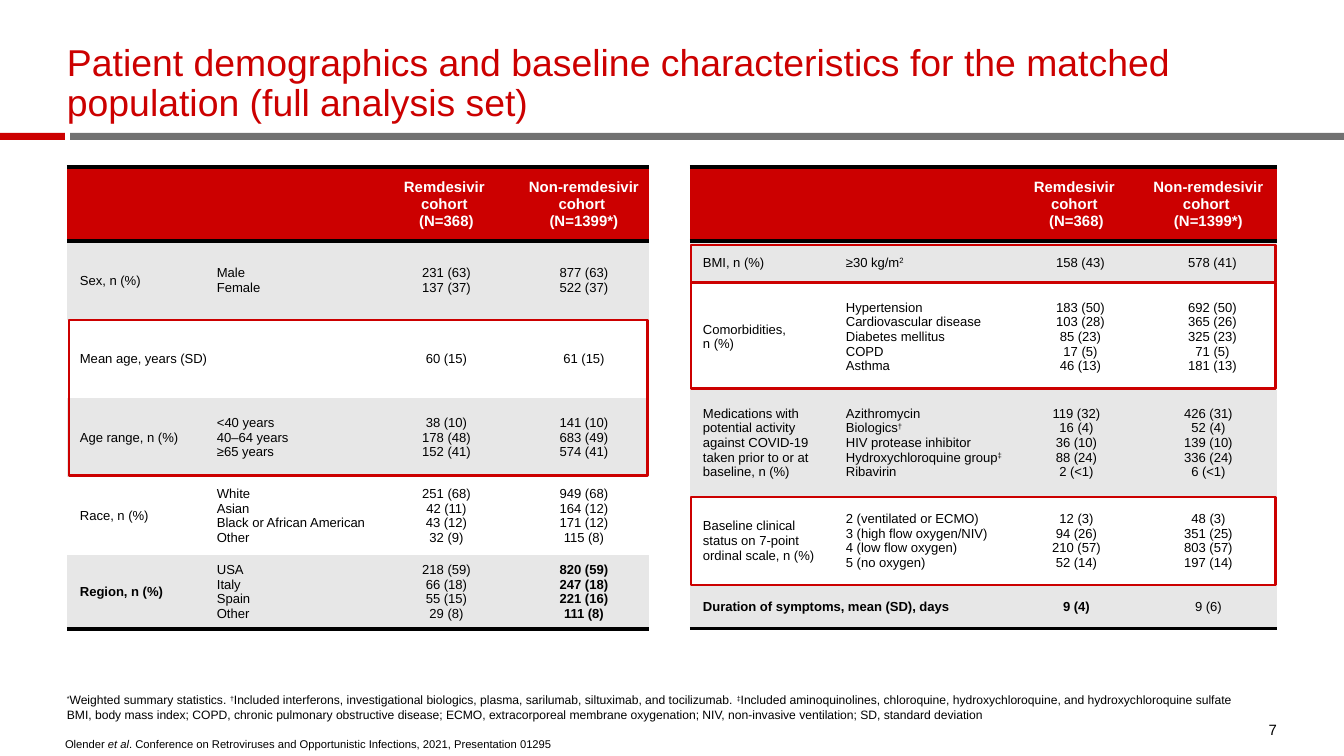
from dataclasses import dataclass

from lxml.etree import SubElement
from pptx import Presentation
from pptx.dml.color import RGBColor
from pptx.enum.shapes import MSO_SHAPE as Preset
from pptx.enum.text import MSO_ANCHOR as Anchor, PP_ALIGN as Align
from pptx.oxml.ns import qn
from pptx.util import Emu, Pt

SCALE = 914400 / 134.4
PLAIN_TABLE = "{2D5ABB26-0587-4C30-8999-92F81FD0307C}"


@dataclass(frozen=True)
class Theme:
    font: str = "Arial"
    red: str = "CC0000"
    grey: str = "717171"
    band: str = "E7E7E7"
    white: str = "FFFFFF"
    black: str = "000000"
    title: float = 20
    header: float = 8
    body: float = 7
    note: float = 6.5
    credit: float = 6
    rule: float = 2
    outline: float = 1.5


@dataclass(frozen=True)
class Row:
    height: int
    cells: tuple
    bold: tuple = ()
    roomy: bool = False


def px(length):
    return Emu(round(length * SCALE))


class Sheet:
    def __init__(self, page, theme):
        self.page = page
        self.theme = theme

    def span(self, para, text, size, color, bold, italic, raised):
        span = para.add_run()
        span.text = text
        font = span.font
        font.name, font.size = self.theme.font, Pt(size)
        font.bold, font.italic = bold, italic
        font.color.rgb = RGBColor.from_string(color)
        if raised:
            span._r.get_or_add_rPr().set("baseline", "30000")

    def paragraphs(self, frame, text, size, color, align=Align.LEFT, bold=False, spacing=None):
        for number, block in enumerate(text.split("|")):
            para = frame.add_paragraph() if number else frame.paragraphs[0]
            para.alignment = align
            if spacing:
                para.line_spacing = spacing
            for position, line in enumerate(block.split("\n")):
                if position:
                    para.add_line_break()
                for i, part in enumerate(line.split("^")):
                    for j, piece in enumerate(part.split("_")):
                        if piece:
                            self.span(para, piece, size, color, bold, j % 2 == 1, i % 2 == 1)

    def text(self, area, text, size, color=None, anchor=Anchor.BOTTOM, inset=(0, 0), **style):
        box = self.page.shapes.add_textbox(*map(px, area))
        frame = box.text_frame
        frame.word_wrap = True
        frame.vertical_anchor = anchor
        frame.margin_left = frame.margin_right = px(inset[0])
        frame.margin_top = frame.margin_bottom = px(inset[1])
        self.paragraphs(frame, text, size, color or self.theme.black, **style)

    def rect(self, area, fill=None, line=None):
        box = self.page.shapes.add_shape(Preset.RECTANGLE, *map(px, area))
        box.shadow.inherit = False
        if fill:
            box.fill.solid()
            box.fill.fore_color.rgb = RGBColor.from_string(fill)
        else:
            box.fill.background()
        if line:
            box.line.color.rgb = RGBColor.from_string(line)
            box.line.width = Pt(self.theme.outline)
        else:
            box.line.fill.background()

    def border(self, cell, side):
        edge = SubElement(cell._tc.get_or_add_tcPr(), qn(f"a:ln{side}"), w=str(Pt(self.theme.rule)))
        fill = SubElement(edge, qn("a:solidFill"))
        SubElement(fill, qn("a:srgbClr"), val=self.theme.black)

    def cell(self, cell, text, row, column, is_header, fill, sides):
        theme = self.theme
        for side in sides:
            self.border(cell, side)
        cell.fill.solid()
        cell.fill.fore_color.rgb = RGBColor.from_string(fill)
        cell.vertical_anchor = Anchor.MIDDLE
        cell.margin_left = px(13)
        cell.margin_right = px(13 if row.roomy and column != 1 else 5)
        cell.margin_top = cell.margin_bottom = px(5)
        if text:
            self.paragraphs(
                cell.text_frame, text,
                theme.header if is_header else theme.body,
                theme.white if is_header else theme.black,
                Align.CENTER if column > 1 else Align.LEFT,
                is_header or column in row.bold,
            )

    def table(self, left, top, widths, rows):
        theme = self.theme
        area = left, top, sum(widths), sum(row.height for row in rows)
        frame = self.page.shapes.add_table(len(rows), len(widths), *map(px, area))
        table = frame.table
        table._tbl.xpath(".//a:tableStyleId")[0].text = PLAIN_TABLE
        for column, width in zip(table.columns, widths):
            column.width = px(width)
        for r, row in enumerate(rows):
            table.rows[r].height = px(row.height)
            is_header = r == 0
            fill = theme.red if is_header else theme.band if r % 2 else theme.white
            sides = "TB" if is_header else "B" if r == len(rows) - 1 else ""
            for c, text in enumerate(row.cells):
                self.cell(table.cell(r, c), text, row, c, is_header, fill, sides)
                if text is None:
                    table.cell(r, c - 1).merge(table.cell(r, c))


HEADINGS = ("", "", "Remdesivir \ncohort \n(N=368)", "Non-remdesivir cohort \n(N=1399*)")

DEMOGRAPHICS = [
    Row(74, HEADINGS),
    Row(79, ("Sex, n (%)", "Male|Female", "231 (63)|137 (37)", "877 (63)|522 (37)")),
    Row(78, ("Mean age, years (SD)", None, "60 (15)", "61 (15)")),
    Row(79, ("Age range, n (%)", "<40 years|40–64 years|≥65 years",
             "38 (10)|178 (48)|152 (41)", "141 (10)|683 (49)|574 (41)")),
    Row(78, ("Race, n (%)", "White|Asian|Black or African American|Other",
             "251 (68)|42 (11)|43 (12)|32 (9)", "949 (68)|164 (12)|171 (12)|115 (8)")),
    Row(74, ("Region, n (%)", "USA|Italy|Spain|Other",
             "218 (59)|66 (18)|55 (15)|29 (8)", "820 (59)|247 (18)|221 (16)|111 (8)"), bold=(0, 3)),
]

CLINICAL = [
    Row(74, HEADINGS, roomy=True),
    Row(43, ("BMI, n (%)", "≥30 kg/m^2^", "158 (43)", "578 (41)")),
    Row(106, ("Comorbidities, \nn (%)",
              "Hypertension|Cardiovascular disease|Diabetes mellitus|COPD|Asthma",
              "183 (50)|103 (28)|85 (23)|17 (5)|46 (13)",
              "692 (50)|365 (26)|325 (23)|71 (5)|181 (13)")),
    Row(106, ("Medications with potential activity against COVID-19 taken prior to or at baseline, n (%)",
              "Azithromycin|Biologics^†^|HIV protease inhibitor|Hydroxychloroquine group^‡^|Ribavirin",
              "119 (32)|16 (4)|36 (10)|88 (24)|2 (<1)",
              "426 (31)|52 (4)|139 (10)|336 (24)|6 (<1)"), roomy=True),
    Row(90, ("Baseline clinical status on 7-point ordinal scale, n (%)",
             "2 (ventilated or ECMO)|3 (high flow oxygen/NIV)|4 (low flow oxygen)|5 (no oxygen)",
             "12 (3)|94 (26)|210 (57)|52 (14)", "48 (3)|351 (25)|803 (57)|197 (14)"), roomy=True),
    Row(43, ("Duration of symptoms, mean (SD), days", None, "9 (4)", "9 (6)"), bold=(0, 2), roomy=True),
]

FOOTNOTE = (
    "^*^Weighted summary statistics. ^†^Included interferons, investigational biologics, plasma, "
    "sarilumab, siltuximab, and tocilizumab. ^‡^Included aminoquinolines, chloroquine, "
    "hydroxychloroquine, and hydroxychloroquine sulfate\n"
    "BMI, body mass index; COPD, chronic pulmonary obstructive disease; ECMO, extracorporeal "
    "membrane oxygenation; NIV, non-invasive ventilation; SD, standard deviation"
)


def main():
    deck = Presentation()
    deck.slide_width, deck.slide_height = px(1344), px(756)
    theme = Theme()
    sheet = Sheet(deck.slides.add_slide(deck.slide_layouts[6]), theme)

    sheet.rect((70, 133, 1274, 7), fill=theme.grey)
    sheet.rect((0, 133, 65, 7), fill=theme.red)
    sheet.text((52, 731, 637, 19),
               "Olender _et al_. Conference on Retroviruses and Opportunistic Infections, 2021, Presentation 01295",
               theme.credit, anchor=Anchor.TOP, inset=(13, 7))
    sheet.text((67, 51, 1210, 74),
               "Patient demographics and baseline characteristics for the matched population (full analysis set)",
               theme.title, theme.red, spacing=0.9)
    sheet.table(67, 167, (137, 170, 137, 138), DEMOGRAPHICS)
    sheet.text((1240, 720, 37, 19), "7", theme.header, align=Align.RIGHT)
    sheet.text((67, 646, 1210, 76), FOOTNOTE, theme.note)
    sheet.table(690, 167, (143, 180, 127, 137), CLINICAL)
    sheet.rect((69, 320, 579, 156), line=theme.red)
    for top, height in ((245, 38), (283, 106), (497, 88)):
        sheet.rect((691, top, 585, height), line=theme.red)

    deck.save("out.pptx")


if __name__ == "__main__":
    main()
